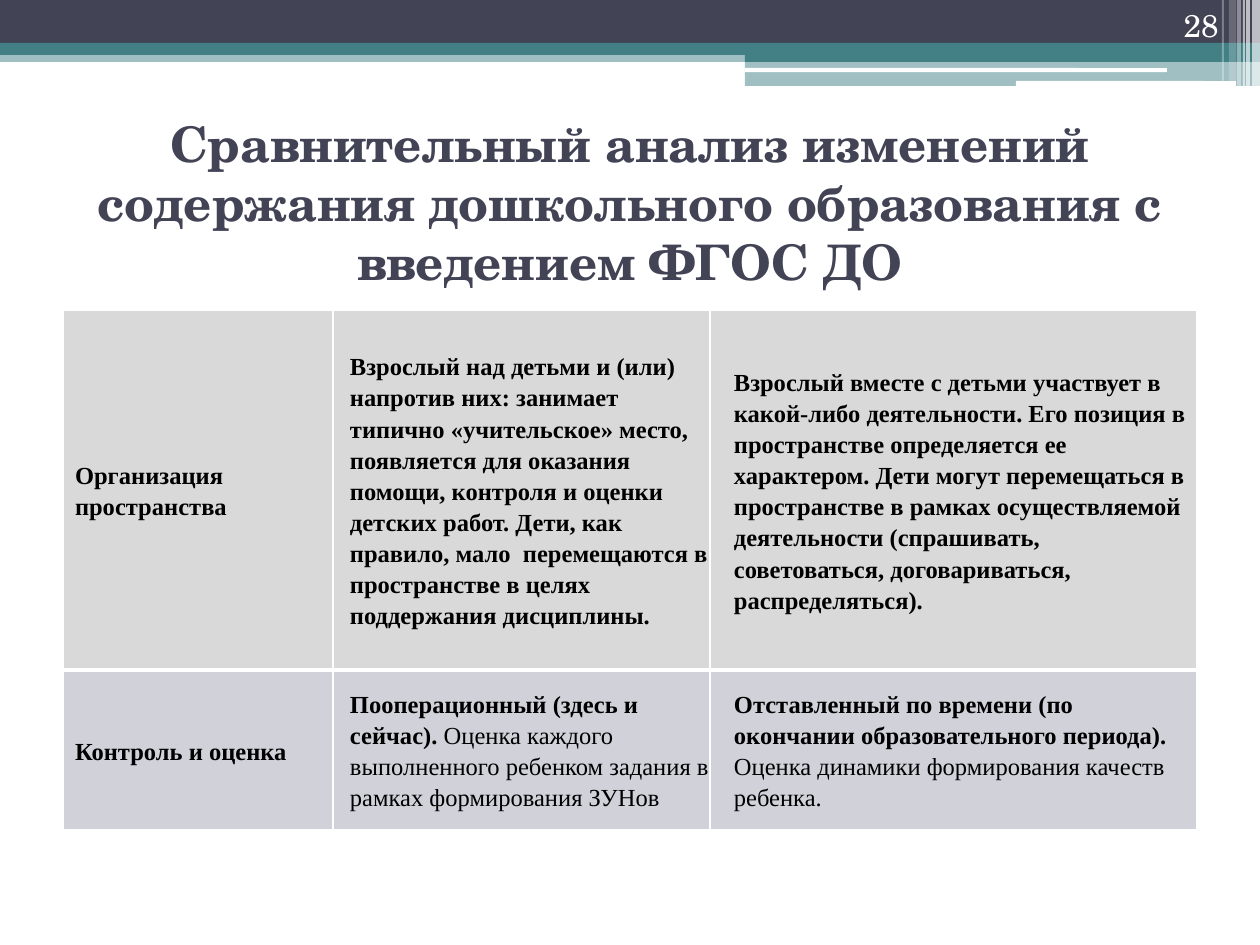
from lxml.etree import SubElement
from pptx import Presentation
from pptx.dml.color import RGBColor
from pptx.enum.shapes import MSO_SHAPE
from pptx.enum.text import MSO_ANCHOR, PP_ALIGN
from pptx.oxml.ns import qn
from pptx.util import Pt

NAVY, TEAL, WHITE, BLACK = "424456", "438086", "FFFFFF", "000000"
DISPLAY_FONT, BODY_FONT = "TeX Gyre Schola", "Times New Roman"

BANDS = [
    (0, 50, 1260, 12, TEAL, 50),
    (0, 0, 1260, 43, NAVY, 100),
    (0, 43, 1260, 12, TEAL, 100),
    (745, 49, 515, 13, TEAL, 100),
    (745, 61, 515, 25, TEAL, 50),
]
HIGHLIGHTS = [(745, 68, 422, 4), (1016, 81, 220, 5)]
STRIPES = [
    (1252, 8, 86, 65),
    (1246, 4, 86, 65),
    (1243, 2, 86, 60),
    (1237, 4, 86, 40),
    (1229, 7, 81, 20),
    (1222, 2, 81, 30),
]

COLUMNS = [270, 377, 487]
INDENTS = [11, 16, 23]
SPACES_AFTER = [0, 10, 0]
ROWS = [
    (360, "D9D9D9", (1, 3), [
        ("Организация пространства", ""),
        ("Взрослый над детьми и (или) напротив них: занимает типично «учительское» место, "
         "появляется для оказания помощи, контроля и оценки детских работ. Дети, как правило, "
         "мало  перемещаются в пространстве в целях поддержания дисциплины.", ""),
        ("Взрослый вместе с детьми участвует в какой-либо деятельности. Его позиция в "
         "пространстве определяется ее характером. Дети могут перемещаться в пространстве в "
         "рамках осуществляемой деятельности (спрашивать, советоваться, договариваться, "
         "распределяться).", ""),
    ]),
    (160, "D1D1DA", (3, 1), [
        ("Контроль и оценка", ""),
        ("Пооперационный (здесь и сейчас).",
         " Оценка каждого выполненного ребенком задания в рамках формирования ЗУНов"),
        ("Отставленный по времени (по окончании образовательного периода).",
         " Оценка динамики формирования качеств ребенка."),
    ]),
]


def px(length):
    return round(length * 914400 / 126)


def color(value):
    return RGBColor.from_string(value)


def apply(target, values):
    for name, value in values.items():
        setattr(target, name, value)


class SlideBuilder:
    """Holds the style and the current slide, and draws each kind of element."""

    def __init__(self, presentation):
        self.slide = presentation.slides.add_slide(presentation.slide_layouts[6])
        self.styles = {
            "title": {"name": DISPLAY_FONT, "size": Pt(28), "bold": True, "color": NAVY},
            "number": {"name": DISPLAY_FONT, "size": Pt(18), "bold": False, "color": WHITE},
            "strong": {"name": BODY_FONT, "size": Pt(14), "bold": True, "color": BLACK},
            "plain": {"name": BODY_FONT, "size": Pt(14), "bold": False, "color": BLACK},
        }

    def bar(self, left, top, width, height, fill, opacity=100, kind=MSO_SHAPE.RECTANGLE):
        shape = self.slide.shapes.add_shape(kind, px(left), px(top), px(width), px(height))
        shape.shadow.inherit = False
        shape.line.fill.background()
        shape.fill.solid()
        shape.fill.fore_color.rgb = color(fill)
        if opacity < 100:
            fill_color = shape.fill._xPr.find(".//" + qn("a:srgbClr"))
            SubElement(fill_color, qn("a:alpha"), val=str(opacity * 1000))

    def run(self, paragraph, text, style):
        run = paragraph.add_run()
        run.text = text
        values = dict(self.styles[style])
        run.font.color.rgb = color(values.pop("color"))
        apply(run.font, values)

    def text(self, left, top, width, height, text, style, alignment, frame_values):
        box = self.slide.shapes.add_textbox(px(left), px(top), px(width), px(height))
        apply(box.text_frame, {"word_wrap": True, **frame_values})
        paragraph = box.text_frame.paragraphs[0]
        paragraph.alignment = alignment
        self.run(paragraph, text, style)

    def borders(self, cell, top, bottom):
        properties = cell._tc.get_or_add_tcPr()
        for side, width in (("L", 1), ("R", 1), ("T", top), ("B", bottom)):
            line = SubElement(properties, qn(f"a:ln{side}"), w=str(Pt(width)))
            SubElement(SubElement(line, qn("a:solidFill")), qn("a:srgbClr"), val=WHITE)

    def cell(self, cell, texts, fill, edges, indent, space_after):
        apply(cell, {"margin_left": px(1), "margin_right": px(1), "margin_top": 0,
                     "margin_bottom": 0, "vertical_anchor": MSO_ANCHOR.MIDDLE})
        self.borders(cell, *edges)
        cell.fill.solid()
        cell.fill.fore_color.rgb = color(fill)
        paragraph = cell.text_frame.paragraphs[0]
        apply(paragraph, {"line_spacing": 1.15, "space_after": Pt(space_after),
                          "alignment": PP_ALIGN.LEFT})
        paragraph._p.get_or_add_pPr().set("marL", str(px(indent)))
        for text, style in zip(texts, ("strong", "plain")):
            if text:
                self.run(paragraph, text, style)

    def table(self, left, top, columns, rows):
        height = sum(row[0] for row in rows)
        table = self.slide.shapes.add_table(
            len(rows), len(columns), px(left), px(top), px(sum(columns)), px(height)).table
        apply(table, {"first_row": False, "horz_banding": False})
        for column, width in zip(table.columns, columns):
            column.width = px(width)
        for row, (height, fill, edges, contents) in zip(table.rows, rows):
            row.height = px(height)
            for cell, texts, indent, space in zip(row.cells, contents, INDENTS, SPACES_AFTER):
                self.cell(cell, texts, fill, edges, indent, space)


def main():
    presentation = Presentation()
    apply(presentation, {"slide_width": px(1260), "slide_height": px(945)})
    builder = SlideBuilder(presentation)
    for band in BANDS:
        builder.bar(*band)
    for highlight in HIGHLIGHTS:
        builder.bar(*highlight, WHITE, kind=MSO_SHAPE.ROUNDED_RECTANGLE)
    for left, width, height, opacity in STRIPES:
        builder.bar(left, 0, width, height, WHITE, opacity)
    builder.text(63, 157, 1134, 148,
                 "Сравнительный анализ изменений содержания дошкольного образования "
                 "с введением ФГОС ДО", "title", PP_ALIGN.CENTER,
                 {"vertical_anchor": MSO_ANCHOR.MIDDLE, "margin_bottom": px(64)})
    builder.table(63, 310, COLUMNS, ROWS)
    builder.text(1126, 0, 105, 50, "28", "number", PP_ALIGN.RIGHT,
                 {"vertical_anchor": MSO_ANCHOR.BOTTOM})
    presentation.save("out.pptx")


if __name__ == "__main__":
    main()
